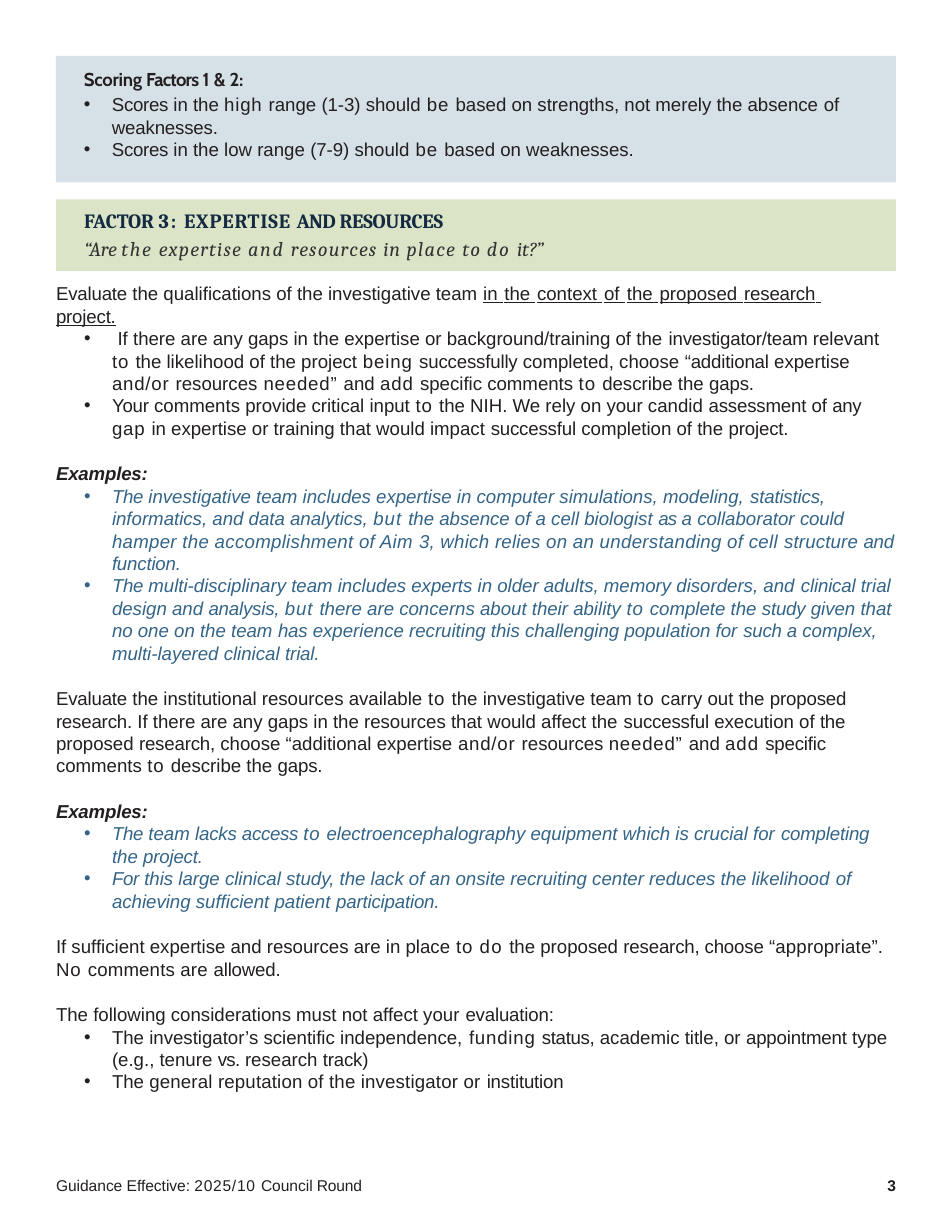
from dataclasses import dataclass
from typing import Optional

import pptx
import pptx.dml.color
import pptx.enum.shapes
import pptx.enum.text
import pptx.oxml.ns
import pptx.util
from lxml import etree

# The page is a grid of quarter-inch cells: 34 columns by 44 rows
COLUMNS, ROWS = 34, 44
CELL = pptx.util.Inches(0.25)
MARGIN, CONTENT = 2, 30
INK, NAVY, GRAY, BLUE, GREEN = "231F20", "132A41", "333333", "336487", "8CA84C"


@dataclass(frozen=True)
class Style:
    size: float = 12
    font: str = "Arial"
    color: str = INK
    bold: bool = False
    italic: bool = False


@dataclass(frozen=True)
class Line:
    """Text where {n} sets the letter spacing in points and _ toggles underline."""
    text: str
    style: Style = Style()
    indent: float = 0
    bullet: bool = False
    before: float = 0


@dataclass(frozen=True)
class Box:
    column: float
    row: float
    columns: float
    rows: float
    inset: float = 0.01


PLAIN = Style()
EXAMPLE = Style(color=BLUE, italic=True)
EXAMPLES_HEAD = Style(bold=True, italic=True)
GAP = 14.9  # one empty line between blocks


def rgb(color: str) -> pptx.dml.color.RGBColor:
    return pptx.dml.color.RGBColor.from_string(color)


def bullet(text: str, style: Style = PLAIN, before: float = 0) -> Line:
    return Line(text, style, 2, True, before)


def add_child(parent, tag: str, **attributes: str):
    return etree.SubElement(parent, pptx.oxml.ns.qn(tag), **attributes)


def write_runs(paragraph, line: Line) -> None:
    spacing, underline = 0.0, False
    for part in line.text.split("{"):
        value, marked, words = part.rpartition("}")
        spacing = float(value) if marked else spacing
        for index, piece in enumerate(words.split("_")):
            underline = underline != (index > 0)
            if not piece:
                continue
            run = paragraph.add_run()
            run.text = piece
            font = run.font
            font.name, font.size = line.style.font, pptx.util.Pt(line.style.size)
            font.bold, font.italic = line.style.bold, line.style.italic
            font.underline = underline
            font.color.rgb = rgb(line.style.color)
            if spacing:
                run._r.get_or_add_rPr().set("spc", str(round(spacing * 100)))


def write_line(paragraph, line: Line, align) -> None:
    paragraph.alignment = align
    paragraph.line_spacing = 1.0
    paragraph.space_before = pptx.util.Pt(line.before)
    paragraph.space_after = pptx.util.Pt(0)
    properties = paragraph._p.get_or_add_pPr()
    properties.set("marL", str(int(CELL * line.indent)))
    properties.set("indent", str(-int(CELL) if line.bullet else 0))
    if line.bullet:
        add_child(properties, "a:buFont", typeface="Arial")
        add_child(properties, "a:buChar", char="•")
    else:
        add_child(properties, "a:buNone")
    if "\t" in line.text:
        stops = add_child(properties, "a:tabLst")
        for columns in (2, 2.2):
            add_child(stops, "a:tab", pos=str(int(CELL * columns)), algn="l")
    write_runs(paragraph, line)


def place_text(shape, box: Box, lines: list[Line],
               align=pptx.enum.text.PP_ALIGN.LEFT) -> None:
    shape.left, shape.top = int(CELL * box.column), int(CELL * box.row)
    shape.width, shape.height = int(CELL * box.columns), int(CELL * box.rows)
    frame = shape.text_frame
    frame.word_wrap = True
    frame.auto_size = pptx.enum.text.MSO_AUTO_SIZE.NONE
    frame.vertical_anchor = pptx.enum.text.MSO_ANCHOR.TOP
    frame.margin_left = frame.margin_right = frame.margin_bottom = 0
    frame.margin_top = pptx.util.Inches(box.inset)
    for index, line in enumerate(lines):
        paragraph = frame.add_paragraph() if index else frame.paragraphs[0]
        write_line(paragraph, line, align)


def tint(shape, color: str, percent: int) -> None:
    shape.fill.solid()
    shape.fill.fore_color.rgb = rgb(color)
    shape.line.fill.background()
    solid = shape._element.spPr.find(pptx.oxml.ns.qn("a:solidFill"))
    add_child(solid[0], "a:alpha", val=str(percent * 1000))


SCORING = [
    Line("{-0.2}Scoring {-0.5}Factors {0}1 & {-0.3}2:",
         Style(font="Cabin", bold=True), 1, before=7.8),
    bullet("{-0.2}Scores {0}in the {0.5}high {0}range {-0.1}(1-{0}3) should{0.6} be {0}based on "
           "strengths, not merely the absence {-0.2}of {-0.1}weaknesses.", before=1.6),
    bullet("{-0.2}Scores {0}in the low range {-0.1}(7-{0}9) should{0.6} be {0}based on weaknesses."),
]

FACTOR = [
    Line("FACTOR {1.1}3: {0.6}EXPERTISE {-0.4}AND {-0.1}RESOURCES",
         Style(13, "Cambria", NAVY, bold=True), 1, before=5.5),
    Line("“Are {1.1}the {0.8}expertise {1.1}and {0.8}resources {0.6}in {0.9}place {0.8}to "
         "{1.2}do {-0.2}it?”", Style(13, "Cambria", GRAY, italic=True), 1, before=2.4),
]

GUIDANCE = [
    # Investigative team
    Line("{-0.1}Evaluate {0}the qualifications of the investigative team _in{1} {0}the{1} {0}context"
         "{1} {0}of{1.4} {0}the{1} {0}proposed{1} {-0.1}research{5} _", before=1),
    Line("{-0.1}_project._"),
    bullet("\tIf there are any gaps in the expertise or background/training of the "
           "{-0.1}investigator/team {0}relevant {0.6}to {0}the likelihood of the project "
           "{0.6}being {-0.1}successfully {0}completed, choose {-0.1}“additional {0}expertise "
           "{0.5}and/or {0}resources{0.5} needed” {0}and {0.6}add {0}specific comments {0.6}to "
           "{0}describe the {-0.1}gaps."),
    bullet("{-0.1}Your {0}comments provide critical input {0.6}to {0}the NIH. We rely on your candid "
           "{-0.1}assessment {0}of {-0.2}any {0.5}gap {0}in expertise or training that would impact "
           "{-0.1}successful {0}completion of the {-0.1}project."),
    Line("{-0.1}Examples:", EXAMPLES_HEAD, before=GAP),
    bullet("{-0.2}The {0}investigative team includes expertise in computer simulations, modeling, "
           "{-0.1}statistics, {0}informatics, and data analytics, {0.6}but {0}the absence of a cell "
           "biologist {-0.5}as {0}a collaborator {-0.1}could {0.2}hamper the accomplishment of Aim"
           "{0.1} 3, {0.2}which {0.1}relies {0.2}on an understanding of cell {0.1}structure "
           "{-0.2}and {-0.1}function.", EXAMPLE),
    bullet("{-0.2}The {0}multi-disciplinary team includes experts in older adults, memory disorders, "
           "and {-0.1}clinical {0}trial design and {-0.1}analysis, {0.6}but {0}there are concerns "
           "about their ability {0.5}to {0}complete the {-0.1}study {0}given that no one on the team "
           "{-0.1}has {0}experience recruiting this challenging population for {-0.2}such "
           "{0}a complex, multi-layered clinical {-0.1}trial.", EXAMPLE),
    # Institutional resources
    Line("{-0.1}Evaluate {0}the institutional resources available {0.6}to {0}the investigative team "
         "{0.6}to {0}carry out the {-0.1}proposed research. {0}If there are any gaps in the resources "
         "that would affect the {-0.1}successful {0}execution of {-0.2}the {0}proposed "
         "{-0.1}research, {0}choose “additional expertise {0.5}and/or {0}resources {0.5}needed” "
         "{0}and {0.6}add {-0.1}specific {0}comments {0.6}to {0}describe the {-0.1}gaps.",
         before=GAP),
    Line("{-0.1}Examples:", EXAMPLES_HEAD, before=GAP),
    bullet("{-0.2}The {0}team {-0.1}lacks {-0.2}access {0.5}to {0}electroencephalography equipment "
           "which is crucial for {-0.1}completing {0}the {-0.1}project.", EXAMPLE),
    bullet("{-0.2}For {0}this large clinical study, the lack of an onsite recruiting center reduces "
           "the likelihood {-0.2}of {0}achieving sufficient patient {-0.1}participation.", EXAMPLE),
    # Outcome and exclusions
    Line("If sufficient expertise and resources are in place {0.6}to {0.8}do {0}the proposed "
         "{-0.1}research, choose {0.1}“appropriate”. {0.6}No {0.1}comments are {-0.1}allowed.",
         before=GAP),
    Line("The following considerations must not affect your {-0.1}evaluation:", before=GAP),
    bullet("The investigator’s scientific independence,{0.5} funding {-0.2}status, {0}academic title, "
           "or {-0.1}appointment {0}type (e.g., tenure {-0.4}vs. {0}research {-0.1}track)"),
    bullet("The {0.1}general reputation of the investigator or {-0.1}institution"),
]


def main() -> None:
    presentation = pptx.Presentation()
    presentation.slide_width = CELL * COLUMNS
    presentation.slide_height = CELL * ROWS
    slide = presentation.slides.add_slide(presentation.slide_layouts[1])

    # Factor heading and guidance
    place_text(slide.shapes.title, Box(MARGIN, 7.12, CONTENT, 2.56, 0.08), FACTOR)
    tint(slide.shapes.title, GREEN, 30)
    place_text(slide.placeholders[1], Box(MARGIN, 10.04, CONTENT + 0.08, 28.92), GUIDANCE)

    # Scoring panel
    panel = slide.shapes.add_shape(pptx.enum.shapes.MSO_SHAPE.RECTANGLE, 0, 0, CELL, CELL)
    panel.shadow.inherit = False
    tint(panel, BLUE, 20)
    place_text(panel, Box(MARGIN, 2, CONTENT, 4.52, 0.11), SCORING)

    # Footer and page number
    footer = slide.shapes.add_textbox(0, 0, CELL, CELL)
    place_text(footer, Box(MARGIN, 41.96, 11.24, 0.88), [
        Line("Guidance Effective: {0.5}2025/10 {0}Council {-0.1}Round", Style(10), before=1)])
    number = slide.shapes.add_textbox(0, 0, CELL, CELL)
    place_text(number, Box(31, 41.96, 1, 0.88), [Line("3", Style(10, bold=True), before=1)],
               pptx.enum.text.PP_ALIGN.RIGHT)

    presentation.save("out.pptx")


if __name__ == "__main__":
    main()
